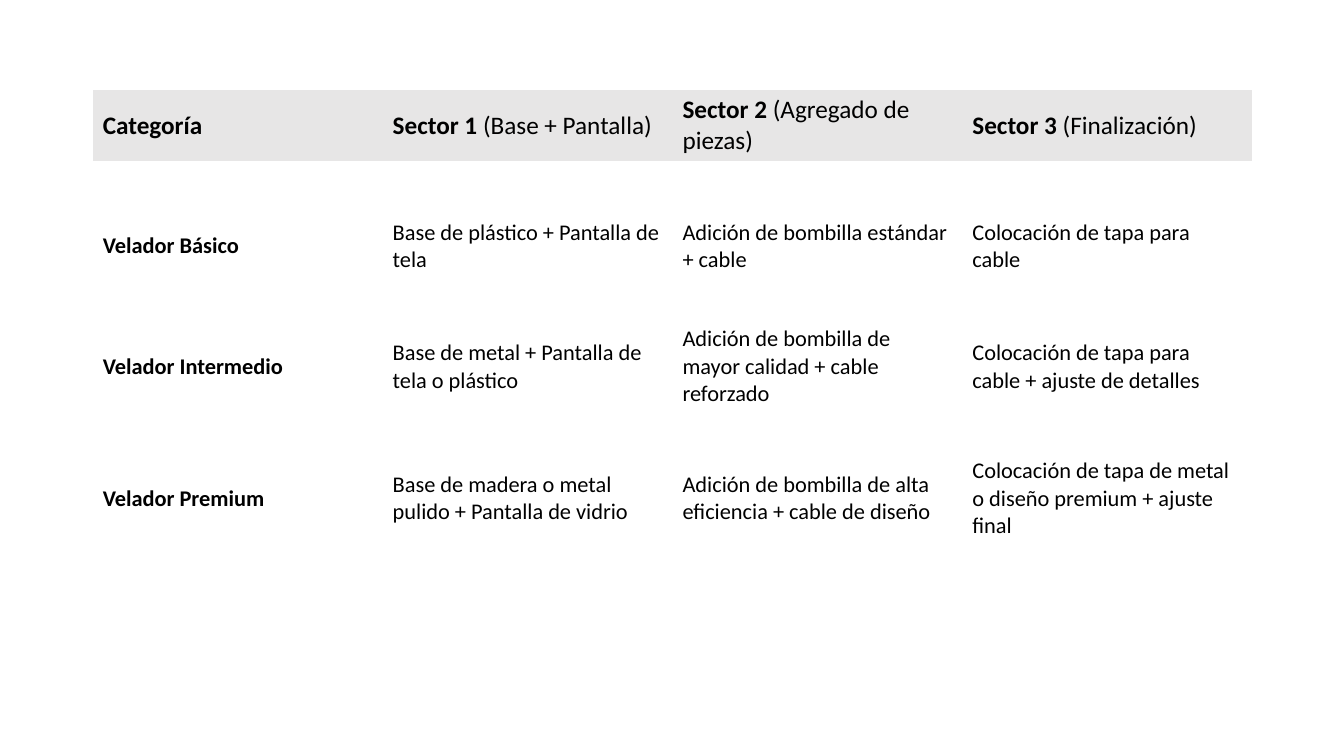
from dataclasses import dataclass

from pptx import Presentation
from pptx.dml.color import RGBColor
from pptx.enum.text import MSO_ANCHOR
from pptx.oxml.ns import qn
from pptx.util import Inches, Pt


@dataclass(frozen=True)
class Theme:
    font: str = "Calibri"
    text: RGBColor = RGBColor(0x00, 0x00, 0x00)
    header_fill: RGBColor = RGBColor(0xE7, 0xE6, 0xE6)
    header_size: Pt = Pt(18)
    body_size: Pt = Pt(16)


THEME = Theme()
TABLE_LEFT = 0.92
TABLE_WIDTH = 11.5
NO_STYLE_NO_GRID = "{2D5ABB26-0587-4C30-8999-92F81FD0307C}"

# Each cell is a pair: bold text, regular text.
HEADER = [
    ("Categoría", ""),
    ("Sector 1", " (Base + Pantalla)"),
    ("Sector 2", " (Agregado de piezas)"),
    ("Sector 3", " (Finalización)"),
]

# Top, height, category, and the work done in each sector.
PRODUCTS = [
    (2.12, 0.63, "Velador Básico", [
        "Base de plástico + Pantalla de tela",
        "Adición de bombilla estándar + cable",
        "Colocación de tapa para cable",
    ]),
    (3.18, 0.9, "Velador Intermedio", [
        "Base de metal + Pantalla de tela o plástico",
        "Adición de bombilla de mayor calidad + cable reforzado",
        "Colocación de tapa para cable + ajuste de detalles",
    ]),
    (4.43, 1.03, "Velador Premium", [
        "Base de madera o metal pulido + Pantalla de vidrio",
        "Adición de bombilla de alta eficiencia + cable de diseño",
        "Colocación de tapa de metal o diseño premium + ajuste final",
    ]),
]


def add_span(para, text, size, bold):
    span = para.add_run()
    span.text = text
    span.font.name = THEME.font
    span.font.size = size
    span.font.bold = bold
    span.font.color.rgb = THEME.text


def fill_cell(cell, bold_text, regular_text, size, fill):
    cell.vertical_anchor = MSO_ANCHOR.MIDDLE
    if fill is None:
        cell.fill.background()
    else:
        cell.fill.solid()
        cell.fill.fore_color.rgb = fill
    para = cell.text_frame.paragraphs[0]
    for text, bold in ((bold_text, True), (regular_text, False)):
        if text:
            add_span(para, text, size, bold)


def add_row_table(page, top, height, cells, size, fill=None):
    """Add a one-row table without borders, its columns equally wide."""
    frame = page.shapes.add_table(
        1, len(cells), Inches(TABLE_LEFT), Inches(top),
        Inches(TABLE_WIDTH), Inches(height))
    table = frame.table
    table.first_row = False
    table.horz_banding = False
    frame.element.find(".//" + qn("a:tableStyleId")).text = NO_STYLE_NO_GRID
    for cell, (bold_text, regular_text) in zip(table.iter_cells(), cells):
        fill_cell(cell, bold_text, regular_text, size, fill)


def main():
    deck = Presentation()
    deck.slide_width = Inches(13.33)
    deck.slide_height = Inches(7.5)
    page = deck.slides.add_slide(deck.slide_layouts[6])

    add_row_table(page, 0.89, 0.7, HEADER, THEME.header_size, THEME.header_fill)
    for top, height, category, tasks in PRODUCTS:
        cells = [(category, "")] + [("", task) for task in tasks]
        add_row_table(page, top, height, cells, THEME.body_size)

    deck.save("out.pptx")


if __name__ == "__main__":
    main()
